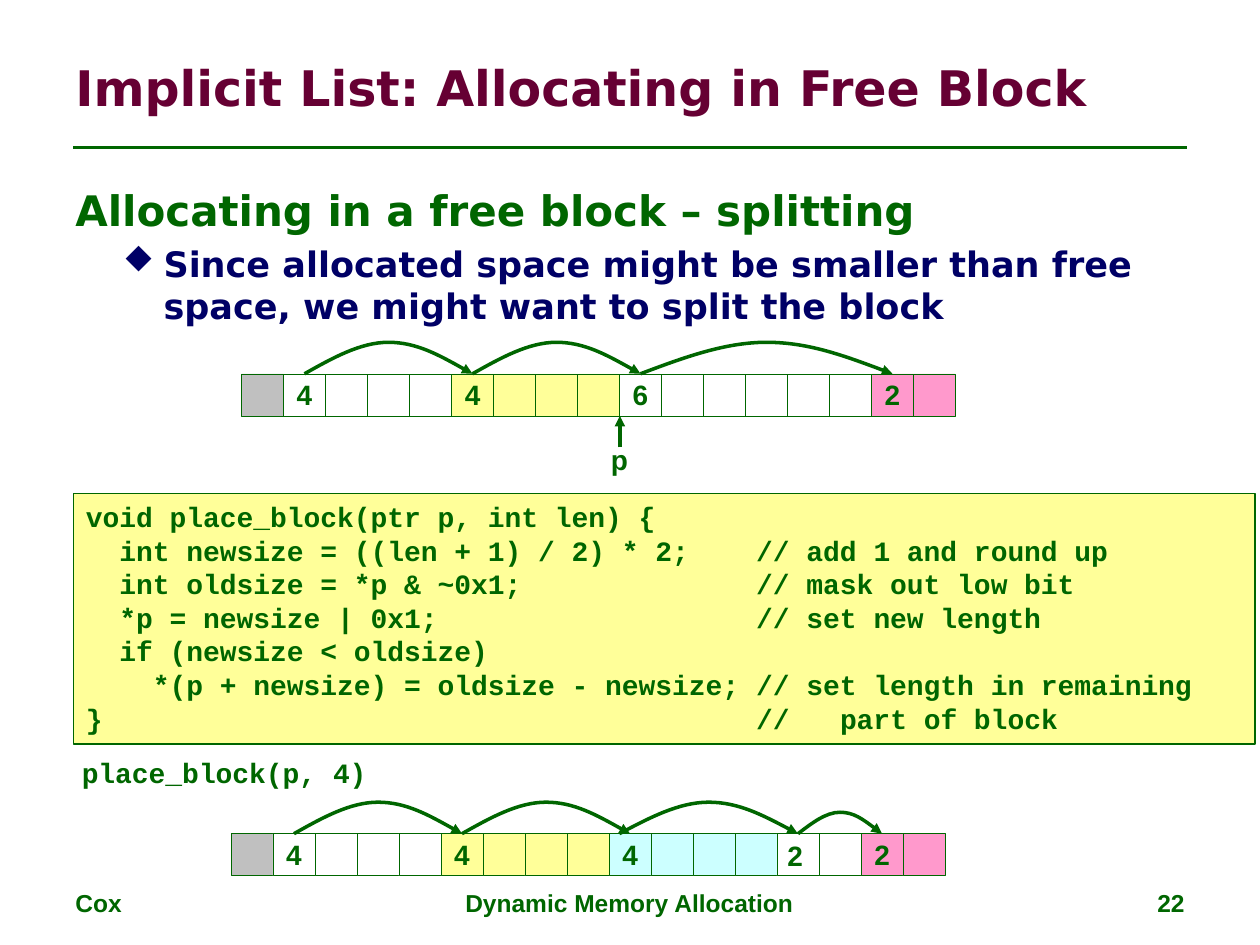
from pptx import Presentation
from pptx.dml.color import RGBColor
from pptx.enum import shapes, text
from pptx.oxml.ns import qn
from pptx.util import Inches, Pt
from lxml import etree

HUES = {
    "green": "006600", "plum": "660033", "navy": "000066", "white": "FFFFFF",
    "gold": "FFFF99", "pink": "FF99CC", "aqua": "CCFFFF", "gray": "C0C0C0",
}
ALIGN = {"l": text.PP_ALIGN.LEFT, "c": text.PP_ALIGN.CENTER, "r": text.PP_ALIGN.RIGHT}
CELL = 1 / 3
CHAR = 0.133
NOTE = 40 * CHAR
CODE = [
    (0, "void place_block(ptr p, int len) {", ""),
    (2, "int newsize = ((len + 1) / 2) * 2;", "// add 1 and round up"),
    (2, "int oldsize = *p & ~0x1;", "// mask out low bit"),
    (2, "*p = newsize | 0x1;", "// set new length"),
    (2, "if (newsize < oldsize)", ""),
    (4, "*(p + newsize) = oldsize - newsize;", "// set length in remaining"),
    (0, "}", "//\tpart of block"),
]


def rgb(hue):
    return RGBColor.from_string(HUES[hue])


def add(node, tag, **attrs):
    return etree.SubElement(node, qn(tag), {k: str(v) for k, v in attrs.items()})


def write(para, words, size=16, font="Arial", hue="green", align="l", before=0, lead=None):
    run = para.add_run()
    run.text = words
    run.font.size, run.font.name, run.font.bold = Pt(size), font, True
    run.font.color.rgb = rgb(hue)
    para.alignment = ALIGN[align]
    para.space_before = Pt(before)
    if lead:
        para.line_spacing = lead
    return para


class Deck:
    def __init__(self, slide, ink="green"):
        self.slide, self.ink = slide, ink
        self.items = slide.shapes

    def stroke(self, item, width, arrow=False):
        item.line.color.rgb = rgb(self.ink)
        item.line.width = Pt(width)
        if arrow:
            add(item.line._get_or_add_ln(), "a:tailEnd", type="triangle")

    def box(self, x, y, w, h, fill, width):
        item = self.items.add_shape(shapes.MSO_SHAPE.RECTANGLE, *map(Inches, (x, y, w, h)))
        item.shadow.inherit = False
        item.fill.solid()
        item.fill.fore_color.rgb = rgb(fill)
        self.stroke(item, width)
        return item.text_frame

    def text(self, x, y, w, h, words, wrap=True, mid=False, inset=0.1, **style):
        frame = self.items.add_textbox(*map(Inches, (x, y, w, h))).text_frame
        frame.word_wrap = wrap
        frame.margin_left = frame.margin_right = Inches(inset)
        if mid:
            frame.vertical_anchor = text.MSO_ANCHOR.MIDDLE
        write(frame.paragraphs[0], words, **style)
        return frame

    def line(self, x1, y1, x2, y2, width, arrow=False):
        item = self.items.add_connector(
            shapes.MSO_CONNECTOR.STRAIGHT, *map(Inches, (x1, y1, x2, y2)))
        self.stroke(item, width, arrow)
        add(item._element.spPr, "a:effectLst")

    def arc(self, x1, x2, y, high):
        wide, tall = Inches(x2 - x1), Inches(high)
        pen = self.items.build_freeform(Inches(x1), Inches(y))
        pen.add_line_segments(
            [(Inches(x1) + wide // 2, Inches(y) - tall), (Inches(x1) + wide, Inches(y))],
            close=False)
        item = pen.convert_to_shape()
        bends = [[(1 / 6, 0.5), (1 / 3, 0), (0.5, 0)], [(2 / 3, 0), (5 / 6, 0.5), (1, 1)]]
        for leg, bend in zip(list(item._element.iter(qn("a:lnTo"))), bends):
            curve = etree.Element(qn("a:cubicBezTo"))
            for across, down in bend:
                add(curve, "a:pt", x=round(wide * across), y=round(tall * down))
            leg.getparent().replace(leg, curve)
        item.shadow.inherit = False
        item.fill.background()
        self.stroke(item, 2, True)

    def heap(self, x, y, blocks, arcs):
        col = 0
        for size, fill, label in blocks:
            for i in range(size):
                frame = self.box(x + col * CELL, y, CELL, CELL, fill, 0.25)
                if label and i == 0:
                    frame.word_wrap = False
                    frame.vertical_anchor = text.MSO_ANCHOR.MIDDLE
                    write(frame.paragraphs[0], label, align="c")
                col += 1
        for start, end, high in arcs:
            self.arc(x + (start + 0.5) * CELL, x + (end + 0.5) * CELL, y, high)

    def code(self, x, y, w, h):
        frame = self.box(x, y, w, h, "gold", 1)
        frame.vertical_anchor = text.MSO_ANCHOR.TOP
        frame.word_wrap = True
        for i, (depth, words, note) in enumerate(CODE):
            para = frame.add_paragraph() if i else frame.paragraphs[0]
            lead = "\t" if depth else ""
            tail = "\t" + note if note else ""
            write(para, lead + words + tail, font="Courier New")
            stops = [depth * CHAR] if depth else []
            tabs = add(para._p.get_or_add_pPr(), "a:tabLst")
            for stop in stops + [NOTE, NOTE + 5 * CHAR]:
                add(tabs, "a:tab", pos=Inches(stop), algn="l")


def main():
    show = Presentation()
    show.slide_width, show.slide_height = Inches(10), Inches(7.5)
    deck = Deck(show.slides.add_slide(show.slide_layouts[6]))
    sans = "DejaVu Sans"

    deck.line(0.58, 1.17, 9.42, 1.17, 1.5)
    for x, w, words, align in [(0.5, 2.33, "Cox", "l"),
                               (3.41, 3.17, "Dynamic Memory Allocation", "c"),
                               (7.17, 2.33, "22", "r")]:
        deck.text(x, 7, w, 0.35, words, size=14, align=align)
    deck.text(0.5, 0.3, 9, 0.78, "Implicit List: Allocating in Free Block",
              mid=True, size=28, font=sans, hue="plum")

    body = deck.text(0.5, 4.25 * CELL, 9, 5.28, "Allocating in a free block – splitting",
                     size=24, font=sans, before=4.5)
    point = write(body.add_paragraph(),
                  "Since allocated space might be smaller than free space, "
                  "we might want to split the block",
                  size=20, font=sans, hue="navy", before=4.2)
    props = point._p.get_or_add_pPr()
    props.set("marL", str(Inches(0.7)))
    props.set("indent", str(Inches(-0.32)))
    add(props, "a:buSzPct", val=90000)
    add(props, "a:buFont", typeface="Wingdings", charset=2)
    add(props, "a:buChar", char="u")

    deck.code(1.75 * CELL, 11.75 * CELL, 9.38, 1.99)
    deck.heap(5.75 * CELL, 8.9 * CELL,
              [(1, "gray", ""), (4, "white", "4"), (4, "gold", "4"),
               (6, "white", "6"), (2, "pink", "2")],
              [(1, 5, 0.25), (5, 9, 0.25), (9, 15, 0.25)])
    deck.line(4.92, 3.55, 4.92, 3.3, 2, True)
    deck.text(4.75, 3.46, 0.34, 0.37, "p", wrap=False)

    deck.text(0.58, 5.98, 2.4, 0.35, "place_block(p, 4)", wrap=False, inset=0.05,
              font="Courier New", align="c", lead=0.9)
    deck.heap(5.5 * CELL, 19.85 * CELL,
              [(1, "gray", ""), (4, "white", "4"), (4, "gold", "4"),
               (4, "aqua", "4"), (2, "white", ""), (2, "pink", "2")],
              [(1, 5, 0.25), (5, 9, 0.25), (8.75, 13, 0.25), (13, 15, 0.17)])
    deck.text(6.15, 6.61, 0.32, 0.37, "2", wrap=False)
    show.save("out.pptx")


if __name__ == "__main__":
    main()
